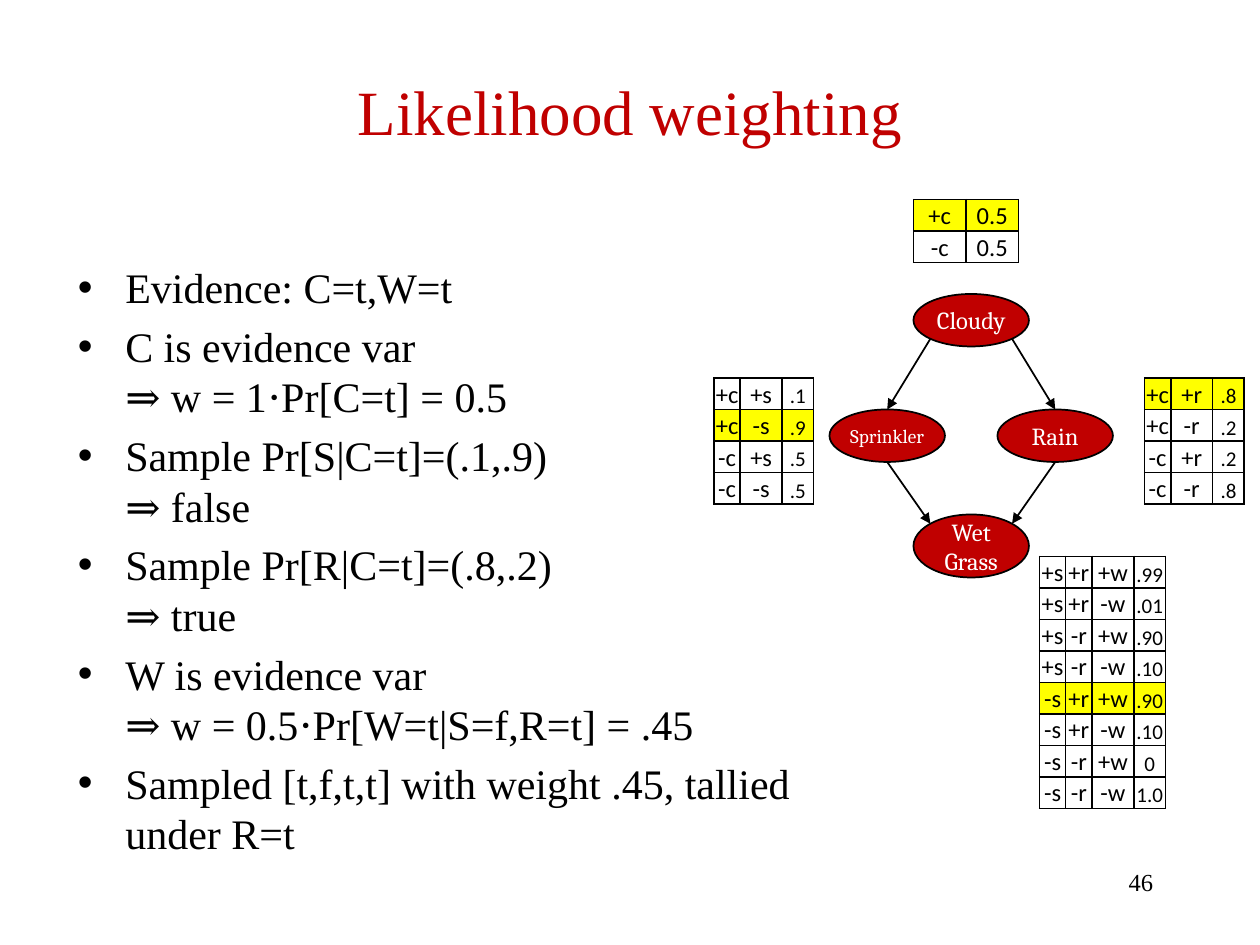
from math import sqrt

from lxml import etree
from pptx import Presentation
from pptx.dml.color import RGBColor
from pptx.enum.shapes import MSO_CONNECTOR, MSO_SHAPE
from pptx.enum.text import MSO_ANCHOR, PP_ALIGN
from pptx.oxml import parse_xml
from pptx.oxml.ns import nsdecls, qn
from pptx.util import Pt

ELLIPSE, STRAIGHT = MSO_SHAPE.OVAL, MSO_CONNECTOR.STRAIGHT
TOP, MIDDLE, BOTTOM = MSO_ANCHOR.TOP, MSO_ANCHOR.MIDDLE, MSO_ANCHOR.BOTTOM
LEFT, CENTER, RIGHT = PP_ALIGN.LEFT, PP_ALIGN.CENTER, PP_ALIGN.RIGHT

COLORS = {"red": "C00000", "black": "000000", "white": "FFFFFF", "highlight": "FFFF00"}
SERIF, NODE_FONT, TABLE_FONT = "Times New Roman", "Cambria", "Calibri"
DIAGONAL = 1 / sqrt(2)
ROW_HEIGHT = 18

STEPS = [
    "Evidence: C=t,W=t",
    "C is evidence var\v⇒ w = 1⋅Pr[C=t] = 0.5",
    "Sample Pr[S|C=t]=(.1,.9)\v⇒ false",
    "Sample Pr[R|C=t]=(.8,.2)\v⇒ true",
    "W is evidence var\v⇒ w = 0.5⋅Pr[W=t|S=f,R=t] = .45",
    "Sampled [t,f,t,t] with weight .45, tallied under R=t",
]

NODES = {
    "Cloudy": ((522, 168, 66, 30), 14),
    "Sprinkler": ((474, 234, 66, 30), 11),
    "Rain": ((570, 234, 66, 30), 14),
    "Wet Grass": ((522, 294, 66, 36), 14),
}

EDGES = [
    ("Cloudy", (-DIAGONAL, DIAGONAL), "Sprinkler", (0, -1)),
    ("Cloudy", (DIAGONAL, DIAGONAL), "Rain", (0, -1)),
    ("Rain", (0, 1), "Wet Grass", (DIAGONAL, -DIAGONAL)),
    ("Sprinkler", (0, 1), "Wet Grass", (-DIAGONAL, -DIAGONAL)),
]

PROBABILITY_TABLES = [
    ((522, 114), (30, 30), (14, 14), 0, ["+c 0.5", "-c 0.5"]),
    ((594, 318), (15, 15, 24, 18), (14, 14, 14, 12), 4,
     ["+s +r +w .99", "+s +r -w .01", "+s -r +w .90", "+s -r -w .10",
      "-s +r +w .90", "-s +r -w .10", "-s -r +w 0", "-s -r -w 1.0"]),
    ((408, 216), (15, 24, 18), (14, 14, 12), 1,
     ["+c +s .1", "+c -s .9", "-c +s .5", "-c -s .5"]),
    ((654, 216), (15, 24, 18), (14, 14, 12), 0,
     ["+c +r .8", "+c -r .2", "-c +r .2", "-c -r .8"]),
]


def rgb(name):
    """Return the named colour."""
    return RGBColor.from_string(COLORS[name])


def points(values):
    """Convert numbers to point lengths."""
    return [Pt(value) for value in values]


def apply_format(target, values):
    """Set every attribute in a dict of format values."""
    for attribute, value in values.items():
        setattr(target, attribute, value)


def write(paragraph, text, font_name, size, color, align):
    """Fill one paragraph with formatted text."""
    paragraph.text = text
    paragraph.alignment = align
    for run in paragraph.runs:
        apply_format(run.font, {"name": font_name, "size": Pt(size)})
        run.font.color.rgb = rgb(color)


def place_title(slide, box, text):
    """Move and format the title placeholder."""
    title = slide.shapes.title
    apply_format(title, dict(zip(("left", "top", "width", "height"), points(box))))
    title.text_frame.vertical_anchor = MIDDLE
    write(title.text_frame.paragraphs[0], text, SERIF, 36, "red", CENTER)


def place_steps(slide, box, steps):
    """Write the bulleted sampling steps."""
    frame = slide.shapes.add_textbox(*points(box)).text_frame
    apply_format(frame, {"word_wrap": True, "vertical_anchor": TOP})
    for number, step in enumerate(steps):
        paragraph = frame.add_paragraph() if number else frame.paragraphs[0]
        properties = paragraph._p.get_or_add_pPr()
        properties.set("marL", str(Pt(27)))
        properties.set("indent", str(Pt(-27)))
        etree.SubElement(properties, qn("a:buFont"), typeface="Arial")
        etree.SubElement(properties, qn("a:buChar"), char="•")
        paragraph.space_before = Pt(4.8 if number else 0)
        write(paragraph, step, SERIF, 24, "black", LEFT)


def place_page_number(slide, box, number):
    """Write the page number."""
    frame = slide.shapes.add_textbox(*points(box)).text_frame
    frame.word_wrap = True
    write(frame.paragraphs[0], number, SERIF, 14, "black", RIGHT)


def place_node(slide, box, label, size):
    """Draw one variable of the network."""
    node = slide.shapes.add_shape(ELLIPSE, *points(box))
    node.shadow.inherit = False
    node.fill.solid()
    node.fill.fore_color.rgb = rgb("red")
    node.line.color.rgb = rgb("black")
    node.line.width = Pt(1)
    apply_format(node.text_frame, {
        "margin_left": 0, "margin_right": 0, "margin_top": 0, "margin_bottom": 0,
        "word_wrap": True, "vertical_anchor": MIDDLE,
    })
    write(node.text_frame.paragraphs[0], label, NODE_FONT, size, "white", CENTER)
    return node


def rim_point(box, direction):
    """Return the point of an ellipse's rim in a unit direction."""
    left, top, width, height = box
    across, down = direction
    return left + width * (1 + across) / 2, top + height * (1 + down) / 2


def place_network(slide, nodes, edges):
    """Draw the variables and the arrows between them."""
    shapes = {label: place_node(slide, box, label, size) for label, (box, size) in nodes.items()}
    for parent, leaving, child, entering in edges:
        start, end = rim_point(nodes[parent][0], leaving), rim_point(nodes[child][0], entering)
        arrow = slide.shapes.add_connector(STRAIGHT, *points(start + end))
        if entering == (0, -1):
            arrow.end_connect(shapes[child], 0)
        arrow.line.color.rgb = rgb("black")
        arrow.line.width = Pt(1)
        etree.SubElement(arrow.line._get_or_add_ln(), qn("a:tailEnd"), type="triangle")
        etree.SubElement(arrow._element.spPr, qn("a:effectLst"))


def add_borders(cell):
    """Draw black lines on the four sides of a cell."""
    properties = cell._tc.get_or_add_tcPr()
    for position, side in enumerate(("lnL", "lnR", "lnT", "lnB")):
        properties.insert(position, parse_xml(
            f'<a:{side} {nsdecls("a")} w="{Pt(1)}"><a:solidFill>'
            f'<a:srgbClr val="{COLORS["black"]}"/></a:solidFill></a:{side}>'))


def place_probabilities(slide, corner, widths, sizes, chosen, lines):
    """Draw a probability table with its chosen row highlighted."""
    box = (*corner, sum(widths), ROW_HEIGHT * len(lines))
    table = slide.shapes.add_table(len(lines), len(widths), *points(box)).table
    apply_format(table, {"first_row": False, "horz_banding": False})
    for column, width in zip(table.columns, widths):
        column.width = Pt(width)
    for row, line in enumerate(lines):
        table.rows[row].height = Pt(ROW_HEIGHT)
        for column, value in enumerate(line.split()):
            cell = table.cell(row, column)
            apply_format(cell, {
                "margin_left": Pt(0.72), "margin_right": Pt(0.72), "margin_top": Pt(0.72),
                "margin_bottom": 0, "vertical_anchor": BOTTOM,
            })
            if row == chosen:
                cell.fill.solid()
                cell.fill.fore_color.rgb = rgb("highlight")
            else:
                cell.fill.background()
            add_borders(cell)
            write(cell.text_frame.paragraphs[0], value, TABLE_FONT, sizes[column], "black", CENTER)


def main():
    """Build and save the slide."""
    deck = Presentation()
    apply_format(deck, {"slide_width": Pt(720), "slide_height": Pt(540)})
    slide = deck.slides.add_slide(deck.slide_layouts[5])
    place_title(slide, (54, 18, 612, 90), "Likelihood weighting")
    place_steps(slide, (37.5, 146, 432, 344), STEPS)
    place_page_number(slide, (516, 492, 150, 36), "46")
    place_network(slide, NODES, EDGES)
    for probabilities in PROBABILITY_TABLES:
        place_probabilities(slide, *probabilities)
    deck.save("out.pptx")


if __name__ == "__main__":
    main()
